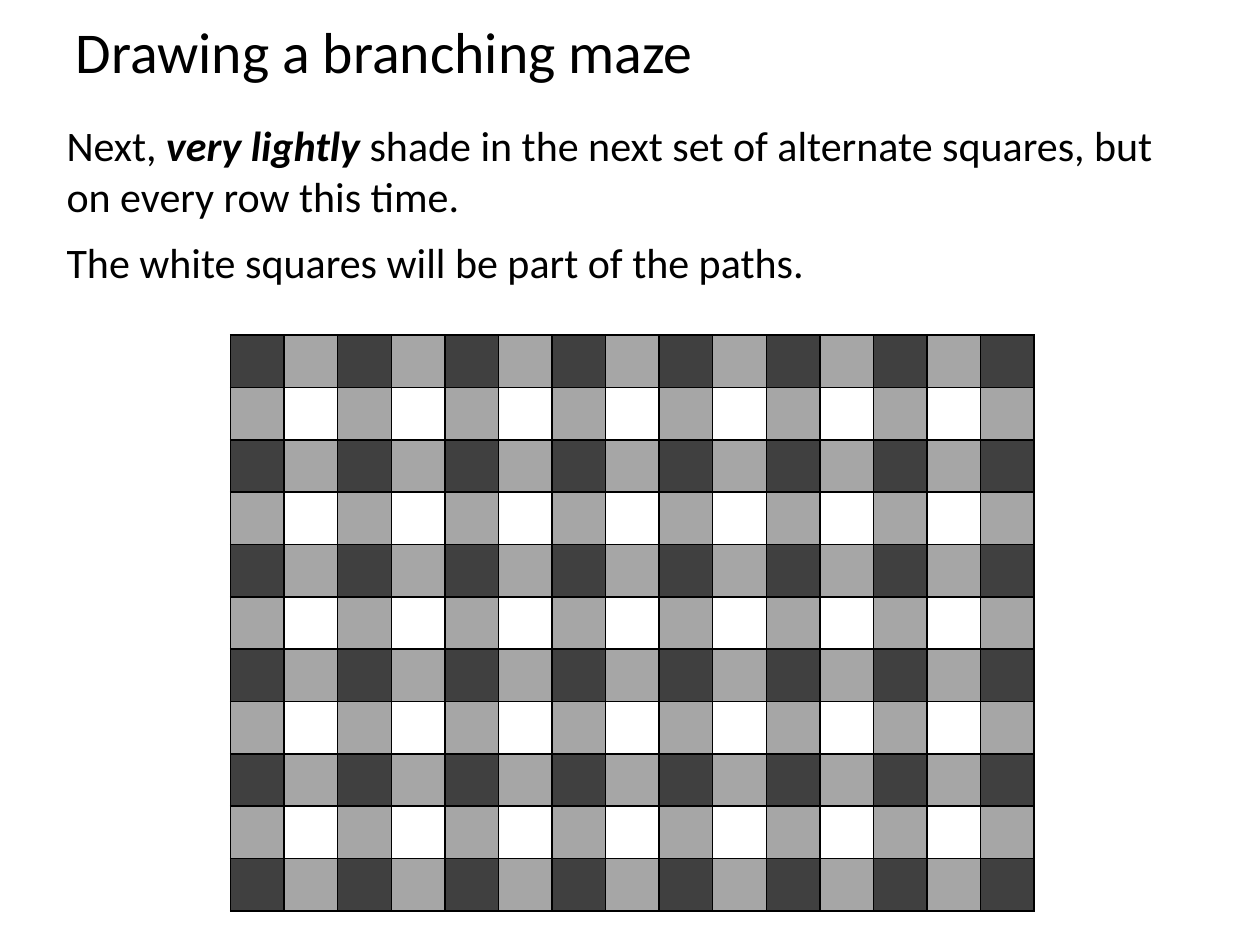
from dataclasses import dataclass

from lxml import etree
from pptx import Presentation
from pptx import util as u
from pptx.dml.color import RGBColor
from pptx.enum import text
from pptx.oxml.ns import qn

PX = 9144  # EMU per px, 100 px to the inch


@dataclass(frozen=True)
class Theme:
    font: str = "Calibri"
    ink: str = "000000"
    wall: str = "404040"
    light_shade: str = "A6A6A6"
    passage: str = "FFFFFF"
    title_size: int = 33
    body_size: int = 24
    grid_line: int = 1


theme = Theme()


def add_words(paragraph, words, size, **emphasis):
    run = paragraph.add_run()
    run.text = words
    run.font.color.rgb = RGBColor.from_string(theme.ink)
    formats = {"name": theme.font, "size": u.Pt(size), **emphasis}
    for key, value in formats.items():
        setattr(run.font, key, value)


def outline_cell(cell):
    properties = cell._tc.get_or_add_tcPr()
    for position, side in enumerate(("a:lnL", "a:lnR", "a:lnT", "a:lnB")):
        line = etree.Element(qn(side), w=str(u.Pt(theme.grid_line)))
        fill = etree.SubElement(line, qn("a:solidFill"))
        etree.SubElement(fill, qn("a:srgbClr"), val=theme.ink)
        properties.insert(position, line)


deck = Presentation()
deck.slide_width, deck.slide_height = 1000 * PX, 750 * PX
slide = deck.slides.add_slide(deck.slide_layouts[5])

# Title
heading = slide.shapes.title
box = {"left": -19 * PX, "top": -19 * PX, "width": 900 * PX, "height": 125 * PX}
box["left"] = 50 * PX
for key, value in box.items():
    setattr(heading, key, value)
heading.text_frame.vertical_anchor = text.MSO_ANCHOR.MIDDLE
heading_line = heading.text_frame.paragraphs[0]
heading_line.alignment = text.PP_ALIGN.LEFT
heading_line.line_spacing = 0.9
add_words(heading_line, "Drawing a branching maze", theme.title_size)

# Instructions: top, height and the words with their emphasis
strong = {"bold": True, "italic": True}
instructions = [
    (90, 91, [
        ("Next, ", {}),
        ("very lightly ", strong),
        ("shade in the next set of alternate squares, but on every row this time.", {}),
    ]),
    (183, 50, [("The white squares will be part of the paths.", {})]),
]
for top, height, phrases in instructions:
    instruction = slide.shapes.add_textbox(43 * PX, top * PX, 913 * PX, height * PX)
    instruction.text_frame.word_wrap = True
    instruction.text_frame.auto_size = text.MSO_AUTO_SIZE.SHAPE_TO_FIT_TEXT
    for words, emphasis in phrases:
        add_words(instruction.text_frame.paragraphs[0], words, theme.body_size, **emphasis)

# Maze grid: walls on even rows and columns, passages on odd ones, light shade between
ROWS, COLUMNS = 11, 15
maze = slide.shapes.add_table(
    ROWS, COLUMNS, 183 * PX, 266 * PX, 638 * PX, 457 * PX
).table
square_fills = (theme.wall, theme.light_shade, theme.passage)
for row in range(ROWS):
    for column in range(COLUMNS):
        square = maze.cell(row, column)
        square.margin_top = square.margin_bottom = 0
        square.fill.solid()
        square.fill.fore_color.rgb = RGBColor.from_string(
            square_fills[row % 2 + column % 2]
        )
        outline_cell(square)

deck.save("out.pptx")
